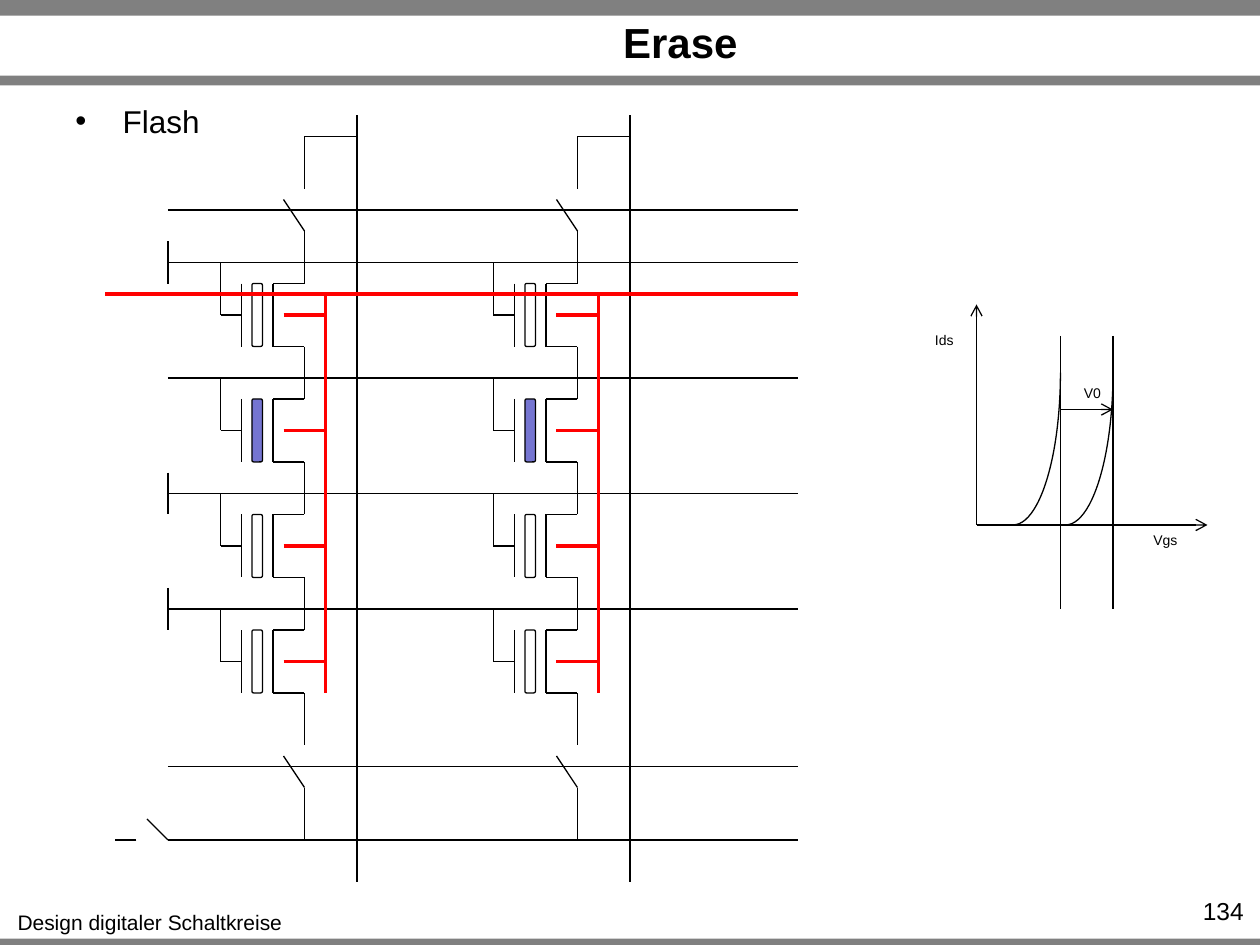
from dataclasses import dataclass

from lxml.etree import SubElement
from pptx import Presentation
from pptx.dml.color import RGBColor
from pptx.enum.shapes import MSO_CONNECTOR, MSO_SHAPE
from pptx.enum.text import MSO_ANCHOR, PP_ALIGN
from pptx.oxml.ns import qn
from pptx.util import Pt

BLACK, GREY, RED, CHARGED = "000000", "808080", "FF0000", "7575D1"
BUS_LEFT, BUS_RIGHT = 96, 456
ROW_TOP, ROW_PITCH, ROWS = 150, 66, 4
SOURCE_Y = 480
CHARGED_ROW = 1
STUB_ROWS = (0, 2, 3)


@dataclass
class Column:
    """X positions of one string of cells, measured from its gate contact."""
    contact: float

    def __post_init__(self):
        self.gate = self.contact + 12
        self.floating = self.contact + 18
        self.channel = self.contact + 30
        self.bulk = self.contact + 36
        self.drain = self.contact + 48
        self.well = self.contact + 60
        self.bit_line = self.contact + 78


@dataclass
class Label:
    text: str
    x: float
    y: float
    w: float


COLUMNS = [Column(126), Column(282)]
WORD_LINES = [ROW_TOP + i * ROW_PITCH for i in range(ROWS)]
THRESHOLDS = [606, 636]
LABELS = [Label("Vgs", 651.6, 300, 28.8), Label("Ids", 527, 186, 25.2),
          Label("V0", 612, 216, 24.5)]


def rgb(value: str) -> RGBColor:
    return RGBColor.from_string(value)


def add_line(s, x1: float, y1: float, x2: float, y2: float,
             color: str = BLACK, width: float = 0.75, arrow: bool = False):
    c = s.shapes.add_connector(MSO_CONNECTOR.STRAIGHT, Pt(x1), Pt(y1), Pt(x2), Pt(y2))
    c.line.color.rgb = rgb(color)
    c.line.width = Pt(width)
    if arrow:
        SubElement(c.line._get_or_add_ln(), qn("a:tailEnd"), type="arrow")
    SubElement(c._element.spPr, qn("a:effectLst"))
    return c


def add_path(s, *points: tuple[float, float]):
    """Join the points by separate straight lines."""
    for start, end in zip(points, points[1:]):
        add_line(s, *start, *end)


def add_box(s, kind, x: float, y: float, w: float, h: float,
            fill: str | None = None, line: str | None = None):
    sp = s.shapes.add_shape(kind, Pt(x), Pt(y), Pt(w), Pt(h))
    sp.shadow.inherit = False
    if fill:
        sp.fill.solid()
        sp.fill.fore_color.rgb = rgb(fill)
    else:
        sp.fill.background()
    if line:
        sp.line.color.rgb = rgb(line)
        sp.line.width = Pt(0.75)
    else:
        sp.line.fill.background()
    return sp


def write(sp, text: str, *, size: float, align=PP_ALIGN.LEFT, bold: bool = False,
          wrap: bool = True, anchor=MSO_ANCHOR.TOP, bullet: bool = False):
    tf = sp.text_frame
    tf.word_wrap = wrap
    tf.vertical_anchor = anchor
    p = tf.paragraphs[0]
    p.alignment = align
    if bullet:
        pPr = p._p.get_or_add_pPr()
        pPr.set("marL", str(Pt(27)))
        pPr.set("indent", str(-Pt(27)))
        SubElement(pPr, qn("a:buFont"), typeface="Arial")
        SubElement(pPr, qn("a:buChar"), char="•")
    r = p.add_run()
    r.text = text
    r.font.name = "Arial"
    r.font.size = Pt(size)
    r.font.bold = bold
    r.font.color.rgb = rgb(BLACK)


def add_text(s, text: str, x: float, y: float, w: float, h: float, **fmt):
    write(s.shapes.add_textbox(Pt(x), Pt(y), Pt(w), Pt(h)), text, **fmt)


def draw_frame(s):
    for y, h in ((536.4, 5.6), (0, 9), (43.2, 5.6)):
        add_box(s, MSO_SHAPE.RECTANGLE, 0, y, 720, h, fill=GREY)
    title = s.shapes.title
    title.left, title.top, title.width, title.height = Pt(93.6), Pt(10), Pt(590.4), Pt(27.4)
    write(title, "Erase", size=24, bold=True, align=PP_ALIGN.CENTER,
          anchor=MSO_ANCHOR.MIDDLE)
    add_text(s, "Flash", 36, 54.7, 648, 47.5, size=18, bullet=True)
    add_text(s, "Design digitaler Schaltkreise", 2.2, 516.2, 167, 21.6,
             size=12, align=PP_ALIGN.CENTER, wrap=False)
    add_text(s, "134", 655.2, 508.3, 62.6, 17.3, size=14, align=PP_ALIGN.RIGHT)


def draw_cell(s, col: Column, word_y: float, charged: bool):
    """Draw one floating-gate transistor hanging from its word line."""
    top, mid, bottom = word_y + 12, word_y + 30, word_y + 48
    add_path(s, (col.contact, word_y), (col.contact, mid), (col.gate, mid))
    add_line(s, col.gate, top, col.gate, bottom)
    add_box(s, MSO_SHAPE.ROUNDED_RECTANGLE, col.floating, top, 6, bottom - top,
            fill=CHARGED if charged else None, line=BLACK)
    add_path(s, (col.drain, top), (col.channel, top), (col.channel, bottom),
             (col.drain, bottom), (col.drain, bottom + 30))


def draw_column(s, col: Column):
    add_line(s, col.bit_line, 66, col.bit_line, 504)
    add_path(s, (col.bit_line, 78), (col.drain, 78), (col.drain, 108))
    add_path(s, (col.bulk, 114), (col.drain, 132), (col.drain, WORD_LINES[0] + 12))
    for i, y in enumerate(WORD_LINES):
        draw_cell(s, col, y, charged=i == CHARGED_ROW)
    add_path(s, (col.bulk, 432), (col.drain, 450), (col.drain, SOURCE_Y))


def draw_buses(s):
    for y in (120, *WORD_LINES, 438, SOURCE_Y):
        add_line(s, BUS_LEFT, y, BUS_RIGHT, y)
    for i in STUB_ROWS:
        add_line(s, BUS_LEFT, WORD_LINES[i] - 12, BUS_LEFT, WORD_LINES[i] + 12)
    add_line(s, 84, SOURCE_Y - 12, BUS_LEFT, SOURCE_Y)
    add_line(s, 78, SOURCE_Y, 66, SOURCE_Y)


def draw_erase_wiring(s):
    bus_y = 168
    for col in COLUMNS:
        for y in WORD_LINES:
            add_line(s, col.bulk, y + 30, col.well, y + 30, RED, 2)
        add_line(s, col.well, bus_y, col.well, WORD_LINES[-1] + 48, RED, 2)
    add_line(s, BUS_RIGHT, bus_y, 60, bus_y, RED, 2)


def draw_characteristic(s):
    x0, y0 = 558, 300
    add_line(s, x0, y0, 690, y0, arrow=True)
    add_line(s, x0, y0, x0, 174, arrow=True)
    for x in THRESHOLDS:
        arc = add_box(s, MSO_SHAPE.ARC, x - 54, 126, 54, 174, line=BLACK)
        arc._element.spPr.xfrm.set("flipV", "1")
        add_line(s, x, 192, x, 348)
    add_line(s, THRESHOLDS[0], 234, THRESHOLDS[1], 234, arrow=True)
    for label in LABELS:
        add_text(s, label.text, label.x, label.y, label.w, 17.3,
                 size=8, align=PP_ALIGN.CENTER, wrap=False)


def main():
    prs = Presentation()
    prs.slide_width, prs.slide_height = Pt(720), Pt(540)
    s = prs.slides.add_slide(prs.slide_layouts[5])
    draw_frame(s)
    for col in COLUMNS:
        draw_column(s, col)
    draw_buses(s)
    draw_characteristic(s)
    draw_erase_wiring(s)
    prs.save("out.pptx")


if __name__ == "__main__":
    main()
